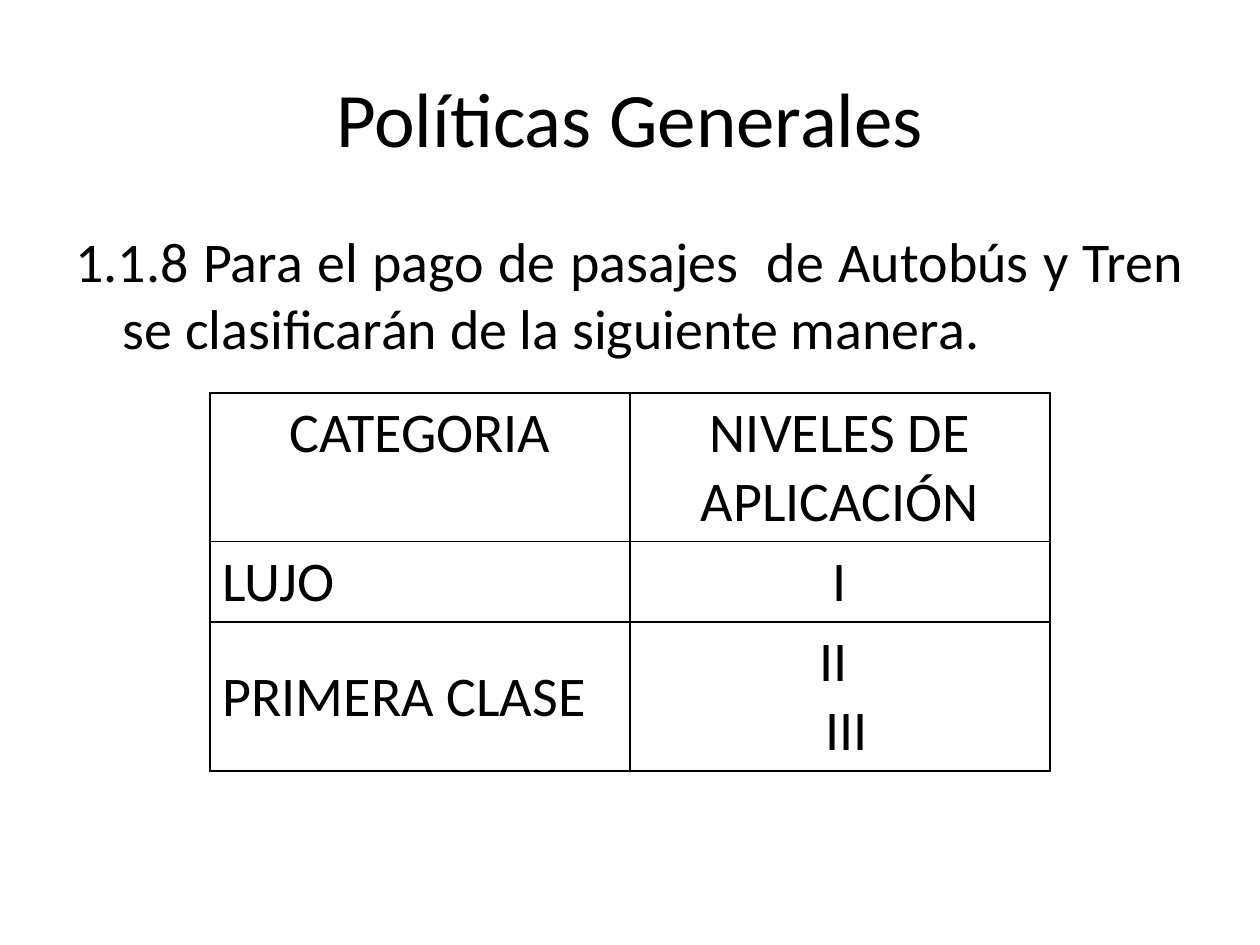
"""Build the general policies slide with its table of travel classes."""
from lxml import etree
from pptx import Presentation
from pptx.dml.color import RGBColor
from pptx.enum.text import MSO_ANCHOR, PP_ALIGN
from pptx.oxml.ns import qn
from pptx.util import Pt

LEFT, CENTER, JUSTIFY = PP_ALIGN.LEFT, PP_ALIGN.CENTER, PP_ALIGN.JUSTIFY
TOP, MIDDLE = MSO_ANCHOR.TOP, MSO_ANCHOR.MIDDLE
BLACK = RGBColor(0, 0, 0)
FONT = "Calibri"

TITLE = "Políticas Generales"
POLICY = ("1.1.8 Para el pago de pasajes  de Autobús y Tren "
          "se clasificarán de la siguiente manera.")
CLASSES = [
    [("CATEGORIA", CENTER, 1), ("NIVELES DE APLICACIÓN", CENTER, 1)],
    [("LUJO", LEFT, 1), ("I", CENTER, 1)],
    [("PRIMERA CLASE", LEFT, 1.5), ("II \n III", CENTER, 1)],
]
ROW_HEIGHTS = [85, 46, 85]
COLUMN_WIDTH = 240
SLIDE_WIDTH, SLIDE_HEIGHT = 720, 540
MARGIN = 36
TABLE_TOP = 224.6


def write(frame, text, size=32, align=LEFT, spacing=1, hanging=0):
    for index, line in enumerate(text.split("\n")):
        paragraph = frame.add_paragraph() if index else frame.paragraphs[0]
        paragraph.alignment = align
        paragraph.line_spacing = spacing
        if hanging:
            properties = paragraph._p.get_or_add_pPr()
            properties.set("marL", str(Pt(hanging)))
            properties.set("indent", str(-Pt(hanging)))
        run = paragraph.add_run()
        run.text = line
        run.font.name = FONT
        run.font.size = Pt(size)
        run.font.color.rgb = BLACK


def add_text(slide, text, top, height, anchor=TOP, **text_format):
    box = slide.shapes.add_textbox(Pt(MARGIN), Pt(top),
                                   Pt(SLIDE_WIDTH - 2 * MARGIN), Pt(height))
    box.text_frame.word_wrap = True
    box.text_frame.vertical_anchor = anchor
    write(box.text_frame, text, **text_format)


def outline(cell):
    properties = cell._tc.get_or_add_tcPr()
    for position, side in enumerate(("a:lnL", "a:lnR", "a:lnT", "a:lnB")):
        border = etree.Element(qn(side), w=str(Pt(1)))
        fill = etree.SubElement(border, qn("a:solidFill"))
        etree.SubElement(fill, qn("a:srgbClr"), val=str(BLACK))
        properties.insert(position, border)


def add_classes(slide):
    rows, columns = len(CLASSES), len(CLASSES[0])
    width = columns * COLUMN_WIDTH
    table = slide.shapes.add_table(
        rows, columns, Pt((SLIDE_WIDTH - width) / 2), Pt(TABLE_TOP),
        Pt(width), Pt(sum(ROW_HEIGHTS))).table
    table.first_row = table.horz_banding = False
    for row, height, entries in zip(table.rows, ROW_HEIGHTS, CLASSES):
        row.height = Pt(height)
        for cell, (text, align, spacing) in zip(row.cells, entries):
            cell.fill.background()
            outline(cell)
            write(cell.text_frame, text, align=align, spacing=spacing)


def main():
    deck = Presentation()
    deck.slide_width, deck.slide_height = Pt(SLIDE_WIDTH), Pt(SLIDE_HEIGHT)
    slide = deck.slides.add_slide(deck.slide_layouts[6])
    add_text(slide, TITLE, 21.6, 90, anchor=MIDDLE, size=44, align=CENTER)
    add_text(slide, POLICY, 126, 356.4, align=JUSTIFY, hanging=27)
    add_classes(slide)
    deck.save("out.pptx")


if __name__ == "__main__":
    main()
